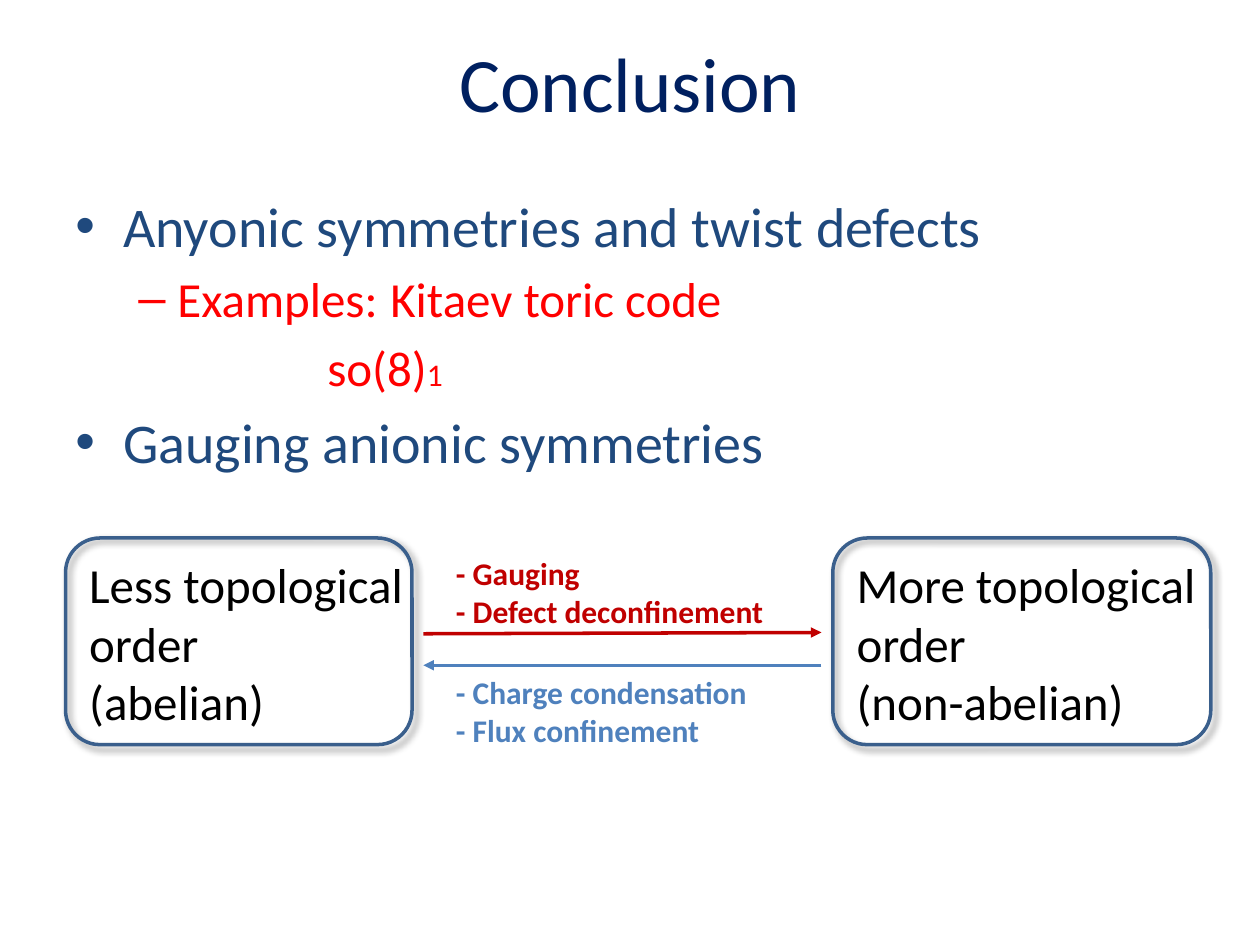
from dataclasses import dataclass

from lxml import etree
from pptx import Presentation
from pptx.dml.color import RGBColor
from pptx.enum.shapes import MSO_CONNECTOR, MSO_SHAPE
from pptx.enum.text import MSO_ANCHOR, PP_ALIGN
from pptx.oxml.ns import qn
from pptx.util import Inches, Pt

STRAIGHT = MSO_CONNECTOR.STRAIGHT
ROUNDED = MSO_SHAPE.ROUNDED_RECTANGLE
CENTER = PP_ALIGN.CENTER
MIDDLE = MSO_ANCHOR.MIDDLE
TITLE_ONLY = 5
COLUMNS, ROWS = 100, 75


@dataclass(frozen=True)
class Theme:
    font: str = "Calibri"
    title: str = "002060"
    topic: str = "1F497D"
    example: str = "FF0000"
    order: str = "000000"
    outline: str = "3A5F8C"
    forward: str = "C00000"
    backward: str = "4F81BD"
    title_size: int = 44
    topic_size: int = 32
    large: int = 28
    small: int = 18
    line: int = 2


def add_text(paragraph, text, *, font, size, color, bold=False):
    """Append one formatted run to a paragraph."""
    run = paragraph.add_run()
    run.text = text
    run.font.name = font
    run.font.size = Pt(size)
    run.font.bold = bold
    run.font.color.rgb = RGBColor.from_string(color)


def add_xml(parent, tag, **attributes):
    return etree.SubElement(parent, qn(tag), attributes)


class SlideBuilder:
    def __init__(self, deck, theme):
        self.theme = theme
        self.column = deck.slide_width / COLUMNS
        self.row = deck.slide_height / ROWS
        self.slide = deck.slides.add_slide(deck.slide_layouts[TITLE_ONLY])

    def place(self, *cells):
        """Turn alternating columns and rows into lengths."""
        return [round(cell * (self.row if i % 2 else self.column))
                for i, cell in enumerate(cells)]

    def title(self, text, *cells):
        heading = self.slide.shapes.title
        heading.left, heading.top, heading.width, heading.height = self.place(*cells)
        heading.text_frame.vertical_anchor = MIDDLE
        paragraph = heading.text_frame.paragraphs[0]
        paragraph.alignment = CENTER
        add_text(paragraph, text, font=self.theme.font,
                 size=self.theme.title_size, color=self.theme.title)

    def text_frame(self, *cells):
        frame = self.slide.shapes.add_textbox(*self.place(*cells)).text_frame
        frame.word_wrap = True
        return frame

    def label(self, lines, *cells, **style):
        frame = self.text_frame(*cells)
        for i, line in enumerate(lines):
            paragraph = frame.add_paragraph() if i else frame.paragraphs[0]
            add_text(paragraph, line, font=self.theme.font, **style)

    def outline(self, items, *cells):
        """Each item: runs of (text, size), colour, margin, first indent, bullet."""
        frame = self.text_frame(*cells)
        for i, (runs, color, margin, indent, bullet) in enumerate(items):
            paragraph = frame.add_paragraph() if i else frame.paragraphs[0]
            paragraph.space_before = Pt(0.2 * runs[0][1])
            properties = paragraph._p.get_or_add_pPr()
            properties.set("marL", str(Inches(margin)))
            properties.set("indent", str(Inches(indent)))
            if bullet:
                add_xml(properties, "a:buFont", typeface="Arial")
                add_xml(properties, "a:buChar", char=bullet)
            else:
                add_xml(properties, "a:buNone")
            for text, size in runs:
                add_text(paragraph, text, font=self.theme.font, size=size, color=color)

    def order_box(self, lines, left, top, width, height):
        self.label(lines, left + 0.9, top + 0.8, 31.7, 15.1,
                   size=self.theme.large, color=self.theme.order)
        box = self.slide.shapes.add_shape(ROUNDED, *self.place(left, top, width, height))
        box.fill.background()
        box.line.color.rgb = RGBColor.from_string(self.theme.outline)
        box.line.width = Pt(self.theme.line)
        box.shadow.inherit = False
        effects = box._element.spPr.find(qn("a:effectLst"))
        shadow = add_xml(effects, "a:outerShdw", blurRad=str(Pt(4)), dist=str(Pt(3)),
                         dir="2700000", algn="tl", rotWithShape="0")
        add_xml(add_xml(shadow, "a:srgbClr", val="000000"), "a:alpha", val="40000")

    def arrow(self, color, *ends):
        link = self.slide.shapes.add_connector(STRAIGHT, *self.place(*ends))
        link.line.color.rgb = RGBColor.from_string(color)
        link.line.width = Pt(self.theme.line)
        add_xml(link.line._get_or_add_ln(), "a:tailEnd", type="triangle")
        add_xml(link._element.spPr, "a:effectLst")


def main():
    deck = Presentation()
    deck.slide_width, deck.slide_height = Inches(10), Inches(7.5)
    theme = Theme()
    page = SlideBuilder(deck, theme)

    page.title("Conclusion", 5, 0.2, 90, 12.5)

    # Summary points
    topic = (theme.topic, 0.38, -0.38, "•")
    page.outline([
        ([("Anyonic symmetries and twist defects", theme.topic_size)], *topic),
        ([("Examples:\tKitaev toric code", theme.large)], theme.example, 0.81, -0.31, "–"),
        ([("\t\t\tso(8)", theme.large), ("1", theme.small)], theme.example, 0.5, 0, None),
        ([("Gauging anionic symmetries", theme.topic_size)], *topic),
    ], 5, 14.7, 90, 49.5)

    # The two kinds of order
    box_top, box_height = 42.7, 16.4
    page.order_box(["Less topological order", "(abelian)"], 5.2, box_top, 27.5, box_height)
    page.order_box(["More topological order", "(non-abelian)"], 66.1, box_top, 30, box_height)

    # Processes leading from one order to the other
    near, far, label_left = 33.6, 65.2, 35.2
    page.arrow(theme.forward, near, 50.3, far, 50.2)
    page.label(["- Gauging", "- Defect deconfinement"], label_left, 43.5, 29.2, 7.1,
               size=theme.small, color=theme.forward, bold=True)
    page.arrow(theme.backward, far, 52.8, near, 52.8)
    page.label(["- Charge condensation", "- Flux confinement"], label_left, 52.9, 30.8, 7.1,
               size=theme.small, color=theme.backward, bold=True)

    deck.save("out.pptx")


if __name__ == "__main__":
    main()
